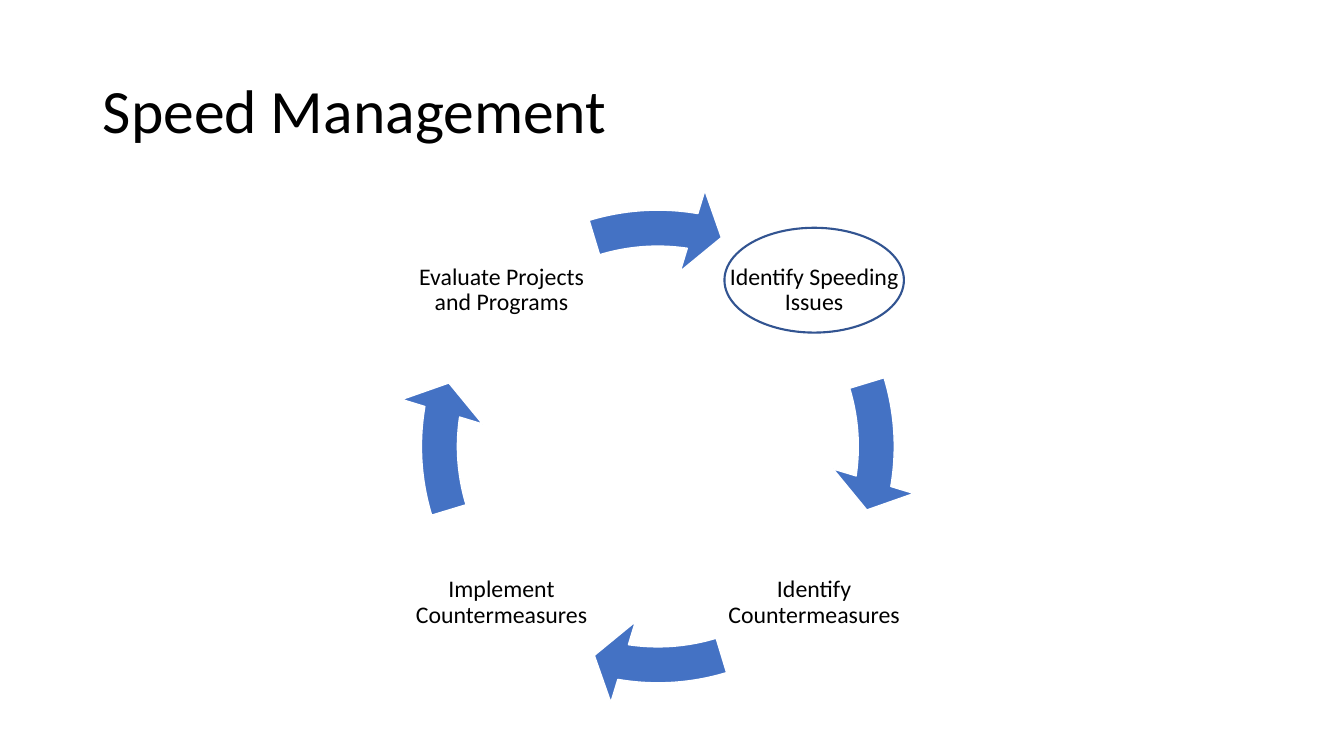
from pptx import Presentation
from pptx.dml.color import RGBColor
from pptx.enum.shapes import MSO_SHAPE
from pptx.enum.text import MSO_ANCHOR, MSO_AUTO_SIZE, PP_ALIGN
from pptx.util import Inches, Pt

TITLE = "Speed Management"
STEPS = [
    ("Identify Speeding Issues", 1, -1),
    ("Identify Countermeasures", 1, 1),
    ("Implement Countermeasures", -1, 1),
    ("Evaluate Projects and Programs", -1, -1),
]
FONT, BLACK, WHITE, BLUE, NAVY = "Calibri", "000000", "FFFFFF", "4472C4", "325491"
CENTER_X, CENTER_Y = 6.525, 4.43
RING, LABEL, OFFSET = 5.17, 1.83, 1.55
ARROW_START, ARROW_END, TURN = 343.1, 9.15, 90
DEGREE = 0.6


def color(hex_code):
    return RGBColor.from_string(hex_code)


def box(cx, cy, w, h):
    return [Inches(v) for v in (cx - w / 2, cy - h / 2, w, h)]


def write(tf, text, size, align):
    tf.word_wrap = True
    tf.auto_size = MSO_AUTO_SIZE.NONE
    tf.vertical_anchor = MSO_ANCHOR.MIDDLE
    tf.text = text
    p = tf.paragraphs[0]
    p.alignment = align
    p.line_spacing = 0.9
    font = p.runs[0].font
    font.name, font.size = FONT, Pt(size)
    font.color.rgb = color(BLACK)


def add_outlined(shapes, kind, bounds, line, width):
    sp = shapes.add_shape(kind, *bounds)
    sp.shadow.inherit = False
    sp.line.color.rgb = color(line)
    sp.line.width = Pt(width)
    return sp


def add_label(shapes, text, cx, cy):
    tf = shapes.add_textbox(*box(cx, cy, LABEL, LABEL)).text_frame
    tf.margin_left = tf.margin_right = tf.margin_top = tf.margin_bottom = Inches(0.02)
    write(tf, text, 17, PP_ALIGN.CENTER)


def add_arrow(shapes, turn):
    sp = add_outlined(shapes, MSO_SHAPE.CIRCULAR_ARROW,
                      box(CENTER_X, CENTER_Y, RING, RING), WHITE, 1)
    sp.fill.solid()
    sp.fill.fore_color.rgb = color(BLUE)
    end, start = (ARROW_END + turn) % 360, (ARROW_START + turn) % 360
    values = (0.069, 7.76 * DEGREE, end * DEGREE, start * DEGREE, 0.081)
    for i, value in enumerate(values):
        sp.adjustments[i] = value


def main():
    """Build the speed management cycle slide."""
    prs = Presentation()
    prs.slide_width, prs.slide_height = Inches(13.33), Inches(7.5)
    s = prs.slides.add_slide(prs.slide_layouts[5])
    title = s.shapes.title
    title.left, title.top, title.width, title.height = box(6.67, 1.125, 11.5, 1.45)
    write(title.text_frame, TITLE, 44, PP_ALIGN.LEFT)

    for i, (text, column, row) in enumerate(STEPS):
        add_label(s.shapes, text, CENTER_X + column * OFFSET, CENTER_Y + row * OFFSET)
        add_arrow(s.shapes, i * TURN)

    highlight = add_outlined(s.shapes, MSO_SHAPE.OVAL,
                             box(CENTER_X + OFFSET, 2.78, 1.78, 1.04), NAVY, 1.5)
    highlight.fill.background()
    prs.save("out.pptx")


if __name__ == "__main__":
    main()
